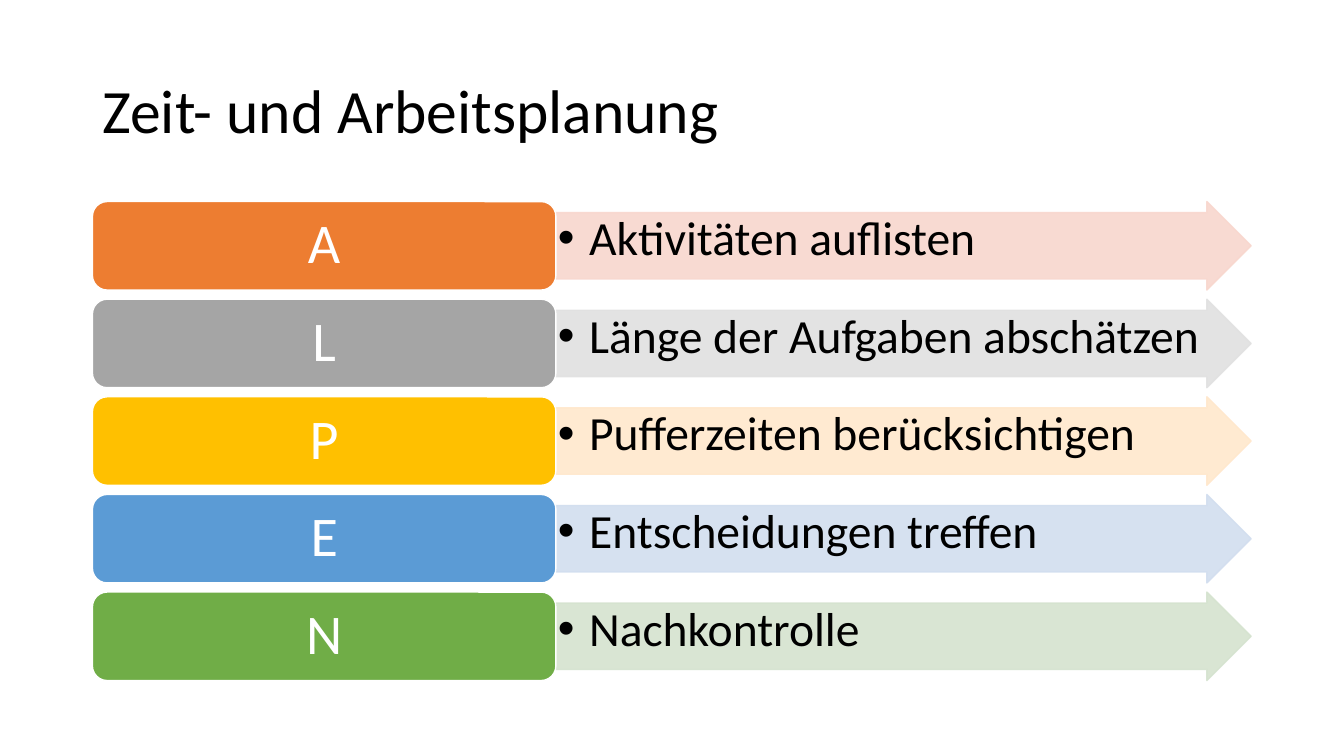
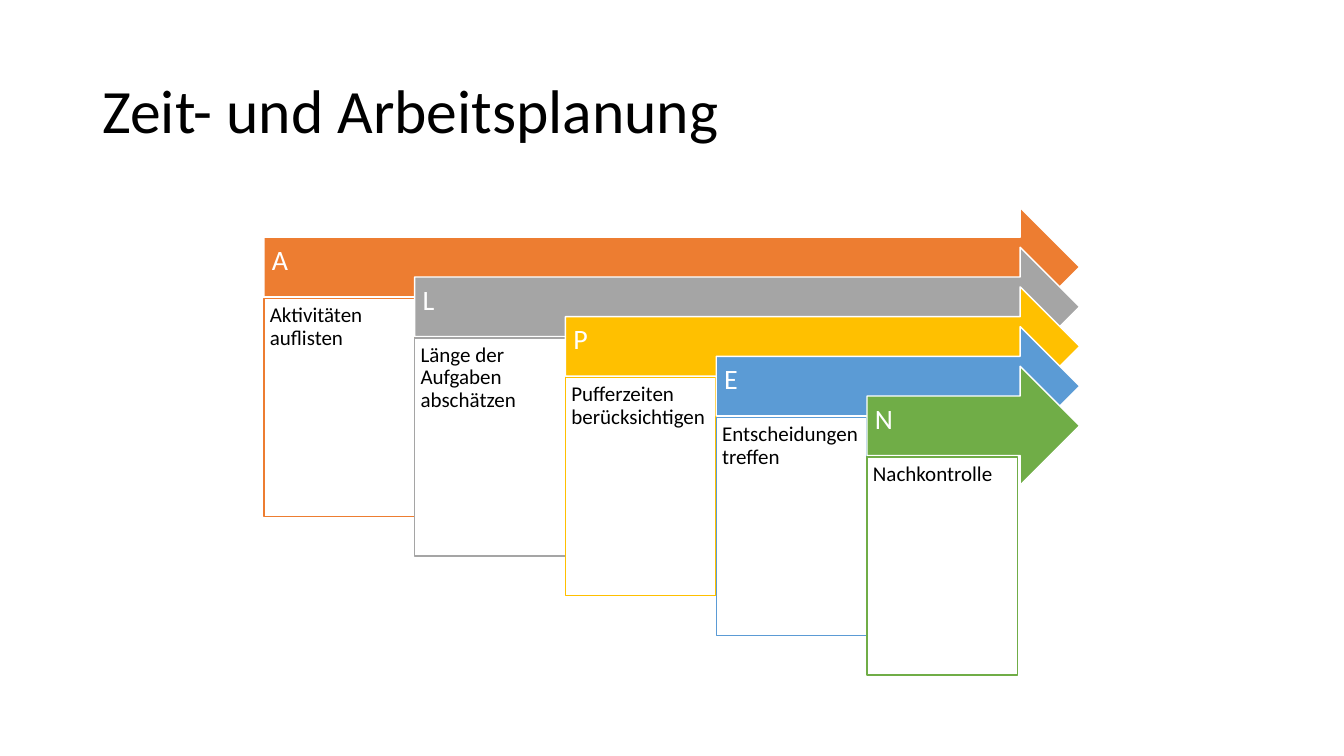
from dataclasses import dataclass

from pptx import Presentation
from pptx import util as u
from pptx.dml.color import RGBColor
from pptx.enum import shapes, text
from pptx.oxml.ns import qn
from lxml import etree

Cm = u.Cm
SHAPE = shapes.MSO_SHAPE
ALIGN = text.PP_ALIGN
ANCHOR = text.MSO_ANCHOR


@dataclass(frozen=True)
class Theme:
    font: str = "Calibri"
    ink: str = "000000"
    paper: str = "FFFFFF"
    title_size: int = 44
    letter_size: int = 40
    bullet_size: int = 34
    band_size: int = 20
    card_size: int = 15
    line_width: int = 1
    line_spacing: float = 0.9
    tint_opacity: int = 90


@dataclass(frozen=True)
class Step:
    letter: str
    label: str
    color: str
    tint: str


THEME = Theme()
TITLE = "Zeit- und Arbeitsplanung"
STEPS = [
    Step("A", "Aktivitäten auflisten", "ED7D31", "F8D7CE"),
    Step("L", "Länge der Aufgaben abschätzen", "A5A5A5", "E1E1E1"),
    Step("P", "Pufferzeiten berücksichtigen", "FFC000", "FFE8CC"),
    Step("E", "Entscheidungen treffen", "5B9BD5", "D2DEEF"),
    Step("N", "Nachkontrolle", "70AD47", "D5E3CF"),
]


def rgb(color):
    return RGBColor.from_string(color)


def add_page(deck, title):
    page = deck.slides.add_slide(deck.slide_layouts.get_by_name("Title Only"))
    box = page.shapes.title
    box.left, box.top, box.width, box.height = Cm(2.33), Cm(1.01), Cm(29.21), Cm(3.68)
    write(box, title, THEME.title_size, THEME.ink, insets=(0.25, 0.13, 0.25, 0.13))
    return page


def write(box, words, size, color, align=ALIGN.LEFT, anchor=ANCHOR.MIDDLE, insets=(0, 0, 0, 0)):
    """Fill a shape with one paragraph; insets are left, top, right, bottom in cm."""
    frame = box.text_frame
    frame.word_wrap = True
    frame.auto_size = text.MSO_AUTO_SIZE.NONE
    frame.vertical_anchor = anchor
    frame.margin_left, frame.margin_top, frame.margin_right, frame.margin_bottom = map(Cm, insets)
    para = frame.paragraphs[0]
    para.text = words
    para.alignment = align
    para.line_spacing = THEME.line_spacing
    para.font.name = THEME.font
    para.font.size = u.Pt(size)
    para.font.color.rgb = rgb(color)
    return para


def add_block(page, kind, place, fill, line, adjust=()):
    """Add a flat preset shape; place is left, top, width, height in cm."""
    block = page.shapes.add_shape(kind, *map(Cm, place))
    block.shadow.inherit = False
    block.fill.solid()
    block.fill.fore_color.rgb = rgb(fill)
    block.line.color.rgb = rgb(line)
    block.line.width = u.Pt(THEME.line_width)
    for index, value in enumerate(adjust):
        block.adjustments[index] = value
    return block


def make_translucent(block, percent):
    for color in block._element.spPr.iter(qn("a:srgbClr")):
        etree.SubElement(color, qn("a:alpha"), val=str(percent * 1000))


def add_bullet(para, indent):
    props = para._p.get_or_add_pPr()
    props.set("marL", str(Cm(indent)))
    props.set("indent", str(-Cm(indent)))
    etree.SubElement(props, qn("a:buFont"), typeface="Arial")
    mark = etree.SubElement(props, qn("a:buChar"), char="•")
    props.append(props.find(qn("a:defRPr")))
    return mark


def add_arrow_row(page, step, top):
    left, label_width, arrow_width, height = 2.33, 11.68, 17.52, 2.23
    arrow = add_block(page, SHAPE.RIGHT_ARROW, (left + label_width, top, arrow_width, height),
                      step.tint, step.tint, (0.75, 0.5))
    make_translucent(arrow, THEME.tint_opacity)
    para = write(arrow, step.label, THEME.bullet_size, THEME.ink,
                 anchor=ANCHOR.TOP, insets=(0.05, 0.05, 0.05, 0.05))
    add_bullet(para, 0.79)
    label = add_block(page, SHAPE.ROUNDED_RECTANGLE, (left, top, label_width, height),
                      step.color, THEME.paper)
    write(label, step.letter, THEME.letter_size, THEME.paper, align=ALIGN.CENTER)


def add_cascade_step(page, step, left, top, card_width):
    """Add an arrow that ends at the common right edge, with its card below."""
    right, arrow_height, card_offset, card_height = 27.21, 3, 2.29, 5.49
    arrow = add_block(page, SHAPE.RIGHT_ARROW, (left, top, right - left, arrow_height),
                      step.color, THEME.paper, (0.5, 0.5))
    write(arrow, step.letter, THEME.band_size, THEME.paper, insets=(0.2, 0.2, 0.71, 0.48))
    card = add_block(page, SHAPE.RECTANGLE, (left, top + card_offset, card_width, card_height),
                     THEME.paper, step.color)
    write(card, step.label, THEME.card_size, THEME.ink,
          anchor=ANCHOR.TOP, insets=(0.15, 0.15, 0.15, 0.15))


def build_list_page(deck):
    page = add_page(deck, TITLE)
    for index, step in enumerate(STEPS):
        add_arrow_row(page, step, top=5.08 + index * 2.46)


def build_cascade_page(deck):
    page = add_page(deck, TITLE)
    column = 3.8
    for index, step in enumerate(STEPS):
        add_cascade_step(page, step, 6.65 + index * column, 5.23 + index, column)


def main():
    deck = Presentation()
    deck.slide_width, deck.slide_height = Cm(33.87), Cm(19.05)
    build_list_page(deck)
    build_cascade_page(deck)
    deck.save("out.pptx")


if __name__ == "__main__":
    main()
